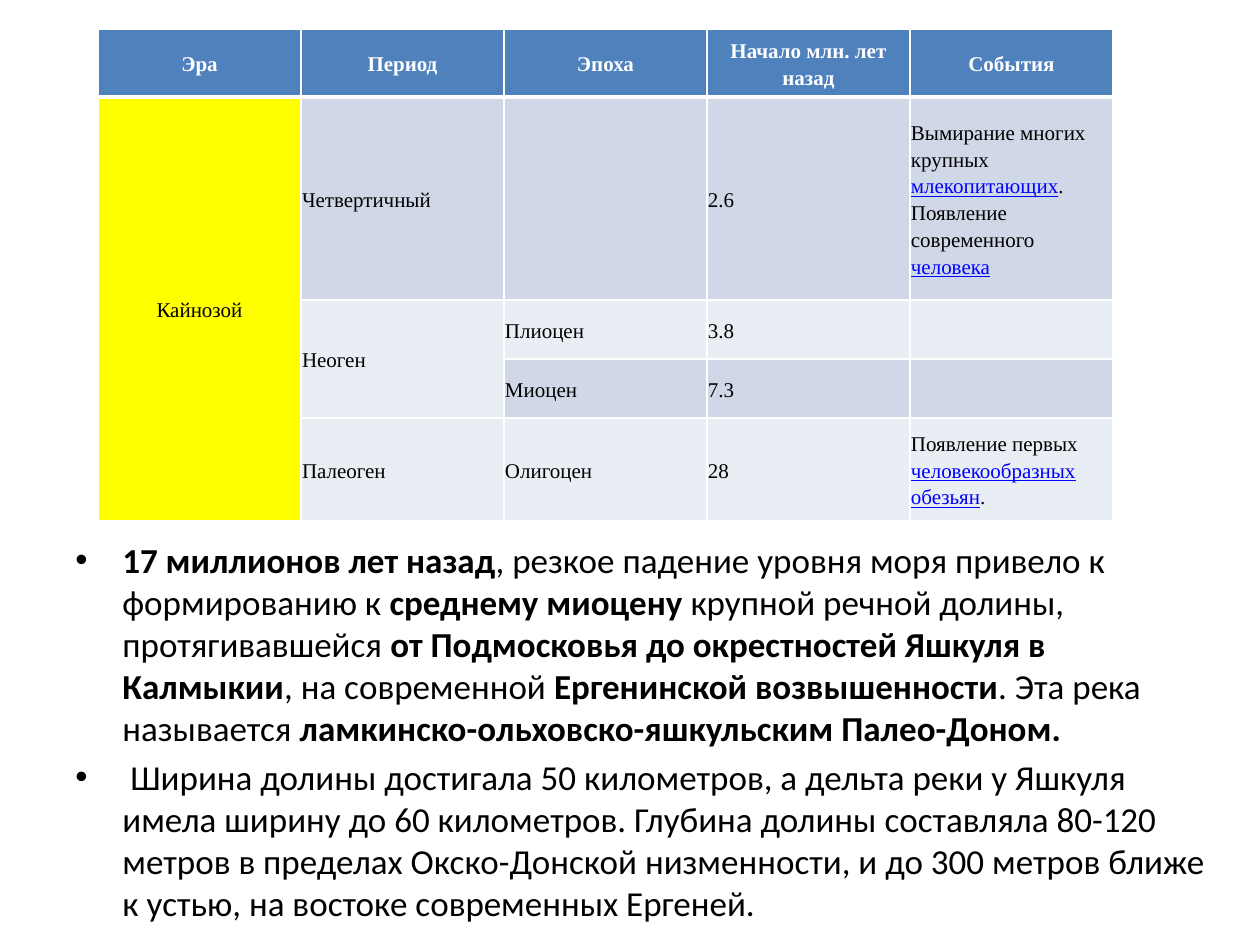
from lxml.etree import SubElement
from pptx import Presentation
from pptx.dml.color import RGBColor
from pptx.enum.text import MSO_ANCHOR, PP_ALIGN
from pptx.oxml.ns import qn
from pptx.util import Emu, Pt

EMU_PER_PX = 914400 // 126
BLACK, WHITE, LINK = "000000", "FFFFFF", "0000FF"
HEADER, YELLOW, DARK_BAND, LIGHT_BAND = "4F81BD", "FFFF00", "D0D8E8", "E9EDF4"


def px(length):
    return Emu(length * EMU_PER_PX)


def color(value):
    return RGBColor.from_string(value)


class SlideBuilder:
    table_font, table_size = "Times New Roman", 12
    body_font, body_size = "Calibri", 20

    def __init__(self, presentation):
        self.slide = presentation.slides.add_slide(presentation.slide_layouts[6])

    def run(self, paragraph, text, font, size, fill=BLACK, bold=False, underline=False):
        run = paragraph.add_run()
        run.text = text
        run.font.name, run.font.size = font, Pt(size)
        run.font.bold, run.font.underline = bold, underline
        run.font.color.rgb = color(fill)

    def borders(self, cell, widths):
        properties = cell._tc.get_or_add_tcPr()
        for side, width in zip("LRTB", widths):
            line = SubElement(properties, qn(f"a:ln{side}"), w=str(Pt(width)))
            solid = SubElement(line, qn("a:solidFill"))
            SubElement(solid, qn("a:srgbClr"), val=WHITE)

    def cell(self, cell, runs, fill, text_color, bold, centered, widths):
        self.borders(cell, widths)
        cell.fill.solid()
        cell.fill.fore_color.rgb = color(fill)
        cell.vertical_anchor = MSO_ANCHOR.MIDDLE
        cell.margin_left = cell.margin_right = px(1)
        cell.margin_top = cell.margin_bottom = px(1)
        paragraph = cell.text_frame.paragraphs[0]
        paragraph.alignment = PP_ALIGN.CENTER if centered else PP_ALIGN.LEFT
        paragraph.line_spacing = 1.15
        for text, is_link in runs:
            self.run(paragraph, text, self.table_font, self.table_size,
                     LINK if is_link else text_color, bold, is_link)

    def table(self, left, top, column_width, row_heights, rows, fills, merges):
        column_count = len(rows[0])
        frame = self.slide.shapes.add_table(
            len(rows), column_count, px(left), px(top),
            px(column_width * column_count), px(sum(row_heights)))
        table = frame.table
        for column in table.columns:
            column.width = px(column_width)
        for row, height in zip(table.rows, row_heights):
            row.height = px(height)
        for i, values in enumerate(rows):
            header = i == 0
            widths = (1, 1, 3 if i == 1 else 1, 3 if header else 1)
            for j, value in enumerate(values):
                runs = [(value, False)] if isinstance(value, str) and value else value or []
                era = j == 0 and not header
                self.cell(table.cell(i, j), runs, YELLOW if era else fills[i],
                          WHITE if header else BLACK, header, header or era, widths)
        for first, last in merges:
            table.cell(*first).merge(table.cell(*last))

    def bullets(self, left, top, width, height, items):
        box = self.slide.shapes.add_textbox(px(left), px(top), px(width), px(height))
        frame = box.text_frame
        frame.word_wrap = True
        for index, runs in enumerate(items):
            paragraph = frame.add_paragraph() if index else frame.paragraphs[0]
            paragraph.space_before = Pt(4)
            properties = paragraph._p.get_or_add_pPr()
            indent = px(47)
            properties.set("marL", str(indent))
            properties.set("indent", str(-indent))
            SubElement(properties, qn("a:buFont"), typeface="Arial")
            SubElement(properties, qn("a:buChar"), char="•")
            for text, bold in runs:
                self.run(paragraph, text, self.body_font, self.body_size, bold=bold)


ROWS = [
    ["Эра", "Период", "Эпоха", "Начало млн. лет назад", "События"],
    ["Кайнозой", "Четвертичный", "", "2.6", [
        ("Вымирание многих крупных ", False), ("млекопитающих", True),
        (". Появление современного ", False), ("человека", True)]],
    ["", "Неоген", "Плиоцен", "3.8", ""],
    ["", "", "Миоцен", "7.3", ""],
    ["", "Палеоген", "Олигоцен", "28", [
        ("Появление первых ", False), ("человекообразных обезьян", True), (".", False)]],
]

BULLETS = [
    [("17 миллионов лет назад", True),
     (", резкое падение уровня моря привело к формированию к ", False),
     ("среднему миоцену ", True),
     ("крупной речной долины, протягивавшейся ", False),
     ("от Подмосковья до окрестностей Яшкуля в Калмыкии", True),
     (", на современной ", False),
     ("Ергенинской возвышенности", True),
     (". Эта река называется ", False),
     ("ламкинско-ольховско-яшкульским Палео-Доном.", True)],
    [(" Ширина долины достигала 50 километров, а дельта реки у Яшкуля имела ширину "
      "до 60 километров. Глубина долины составляла 80-120 метров в пределах "
      "Окско-Донской низменности, и до 300 метров ближе к устью, на востоке "
      "современных Ергеней.", False)],
]


def main():
    presentation = Presentation()
    presentation.slide_width, presentation.slide_height = px(1260), px(945)
    builder = SlideBuilder(presentation)

    # Body text
    builder.bullets(63, 532, 1168, 394, BULLETS)

    # Table of Cenozoic periods
    builder.table(98, 29, 203, [68, 203, 59, 59, 103], ROWS,
                  [HEADER, DARK_BAND, LIGHT_BAND, DARK_BAND, LIGHT_BAND],
                  [((1, 0), (4, 0)), ((2, 1), (3, 1))])

    presentation.save("out.pptx")


if __name__ == "__main__":
    main()
